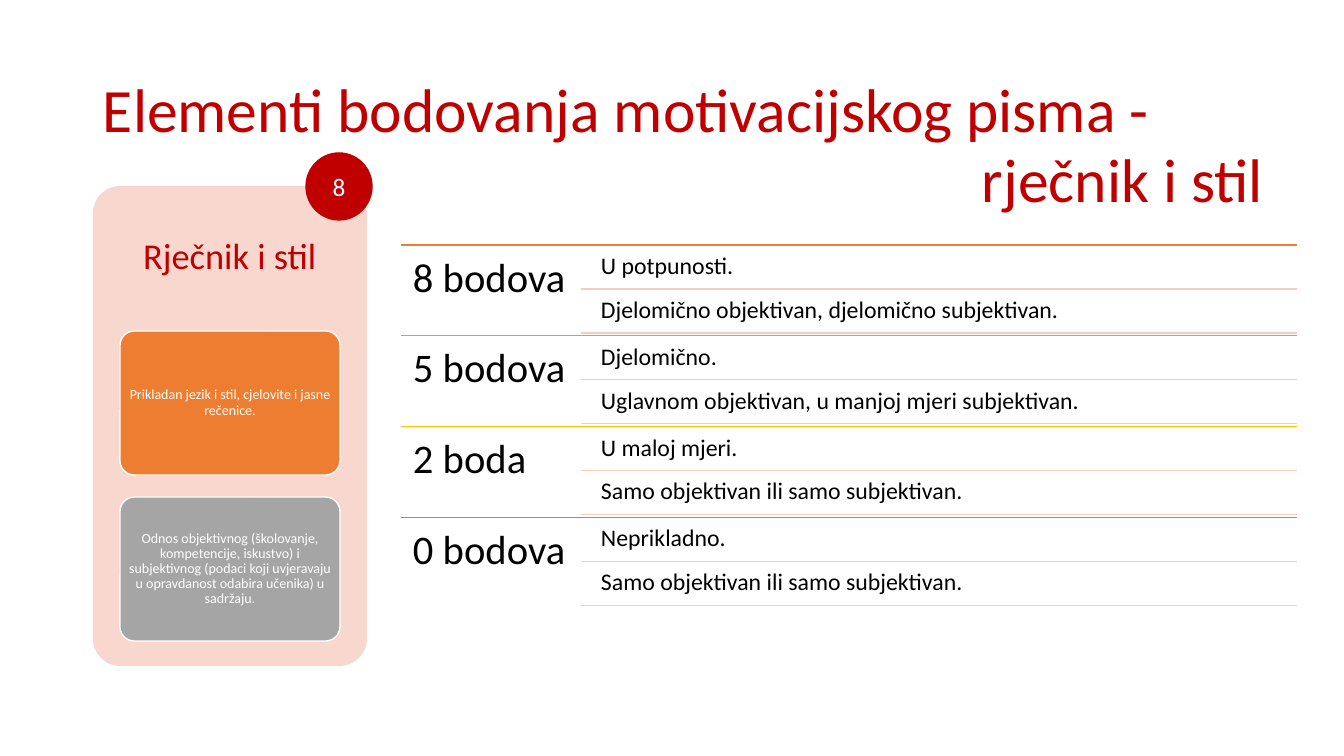
from pptx import Presentation
from pptx.dml.color import RGBColor
from pptx.enum.shapes import MSO_CONNECTOR, MSO_SHAPE
from pptx.enum.text import MSO_ANCHOR, PP_ALIGN
from pptx.oxml.ns import qn
from pptx.util import Pt
from lxml.etree import SubElement

RED = RGBColor(0xC0, 0x00, 0x00)
ORANGE = RGBColor(0xED, 0x7D, 0x31)
GRAY = RGBColor(0xA5, 0xA5, 0xA5)
GOLD = RGBColor(0xFF, 0xC0, 0x00)
BLUE = RGBColor(0x5B, 0x9B, 0xD5)
PINK = RGBColor(0xF6, 0xCC, 0xBE)
BLUSH = RGBColor(0xF8, 0xD7, 0xCE)
BLACK = RGBColor(0x00, 0x00, 0x00)
WHITE = RGBColor(0xFF, 0xFF, 0xFF)

TITLES = [
    ("Elementi bodovanja motivacijskog pisma -", (93, 40, 1159, 146)),
    ("rječnik i stil", (972, 140, 363, 86)),
]
LEVELS = [
    ("8 bodova", ORANGE, ["U potpunosti.", "Djelomično objektivan, djelomično subjektivan."]),
    ("5 bodova", GRAY, ["Djelomično.", "Uglavnom objektivan, u manjoj mjeri subjektivan."]),
    ("2 boda", GOLD, ["U maloj mjeri.", "Samo objektivan ili samo subjektivan."]),
    ("0 bodova", BLUE, ["Neprikladno.", "Samo objektivan ili samo subjektivan."]),
]
PANEL_HEADING = "Rječnik i stil"
CRITERIA = [
    ("Prikladan jezik i stil, cjelovite i jasne rečenice.", ORANGE),
    ("Odnos objektivnog (školovanje, kompetencije, iskustvo) i subjektivnog "
     "(podaci koji uvjeravaju u opravdanost odabira učenika) u sadržaju.", GRAY),
]
MAX_POINTS = "8"

PX_PER_INCH = 100.8
LEVELS_LEFT, LEVELS_TOP, LEVELS_RIGHT, LEVELS_HEIGHT = 401, 245, 1297, 363
LABEL_WIDTH = 179
RULE_LEFT = 581
ANSWER_LEFT, ANSWER_GAP, ANSWER_HEIGHT, ANSWER_PITCH = 594, 2, 42, 44
PANEL = (93, 186, 274, 480)
CARD_LEFT, CARD_TOP, CARD_WIDTH, CARD_HEIGHT, CARD_PITCH = 120, 331, 220, 144, 166
BADGE = (306, 153, 66, 67)

prs = Presentation()


def px(value):
    return round(value * 914400 / PX_PER_INCH)


prs.slide_width, prs.slide_height = px(1344), px(756)
slide = prs.slides.add_slide(prs.slide_layouts[6])


def write(shape, text, size, color, align=PP_ALIGN.LEFT, anchor=MSO_ANCHOR.MIDDLE,
          inset=(10, 5), spacing=0.9):
    frame = shape.text_frame
    frame.text = text
    paragraph = frame.paragraphs[0]
    side, edge = map(px, inset)
    formats = [
        (frame, {"word_wrap": True, "vertical_anchor": anchor, "margin_left": side,
                 "margin_right": side, "margin_top": edge, "margin_bottom": edge}),
        (paragraph, {"alignment": align, "line_spacing": spacing}),
        (paragraph.runs[0].font, {"size": Pt(size), "name": "Calibri"}),
    ]
    for target, values in formats:
        for attribute, value in values.items():
            setattr(target, attribute, value)
    paragraph.runs[0].font.color.rgb = color


def add_text(box, text, size, color, **options):
    write(slide.shapes.add_textbox(*map(px, box)), text, size, color, **options)


def add_rule(left, y, color):
    rule = slide.shapes.add_connector(
        MSO_CONNECTOR.STRAIGHT, px(left), px(y), px(LEVELS_RIGHT), px(y))
    rule.line.color.rgb = color
    rule.line.width = Pt(1)
    SubElement(rule._element.spPr, qn("a:effectLst"))


def add_filled(kind, box, fill, outline=None):
    shape = slide.shapes.add_shape(kind, *map(px, box))
    shape.shadow.inherit = False
    shape.fill.solid()
    shape.fill.fore_color.rgb = fill
    if outline is None:
        shape.line.fill.background()
    else:
        shape.line.color.rgb = outline
        shape.line.width = Pt(1)
    if kind == MSO_SHAPE.ROUNDED_RECTANGLE:
        shape.adjustments[0] = 0.1
    return shape


add_text(TITLES[0][1], TITLES[0][0], 44, RED)

level_height = LEVELS_HEIGHT / len(LEVELS)
for i, (points, color, answers) in enumerate(LEVELS):
    top = LEVELS_TOP + i * level_height
    add_rule(LEVELS_LEFT, top, color)
    add_text((LEVELS_LEFT, top, LABEL_WIDTH, level_height), points, 29, BLACK,
             anchor=MSO_ANCHOR.TOP, inset=(12, 12))
    for j, answer in enumerate(answers):
        answer_top = top + ANSWER_GAP + j * ANSWER_PITCH
        add_text((ANSWER_LEFT, answer_top, LEVELS_RIGHT - ANSWER_LEFT, ANSWER_HEIGHT),
                 answer, 17, BLACK, anchor=MSO_ANCHOR.TOP, inset=(7, 7))
        add_rule(RULE_LEFT, answer_top + ANSWER_HEIGHT, PINK)

add_filled(MSO_SHAPE.ROUNDED_RECTANGLE, PANEL, BLUSH)
add_text((*PANEL[:3], CARD_HEIGHT), PANEL_HEADING, 26, RED,
         align=PP_ALIGN.CENTER, inset=(11, 11))

for i, (criterion, color) in enumerate(CRITERIA):
    card_box = (CARD_LEFT, CARD_TOP + i * CARD_PITCH, CARD_WIDTH, CARD_HEIGHT)
    card = add_filled(MSO_SHAPE.ROUNDED_RECTANGLE, card_box, color, WHITE)
    write(card, criterion, 10, WHITE, align=PP_ALIGN.CENTER, inset=(3, 2))

badge = add_filled(MSO_SHAPE.OVAL, BADGE, RED, RED)
write(badge, MAX_POINTS, 18, WHITE, align=PP_ALIGN.CENTER, spacing=1.0)

add_text(TITLES[1][1], TITLES[1][0], 44, RED)

prs.save("out.pptx")
